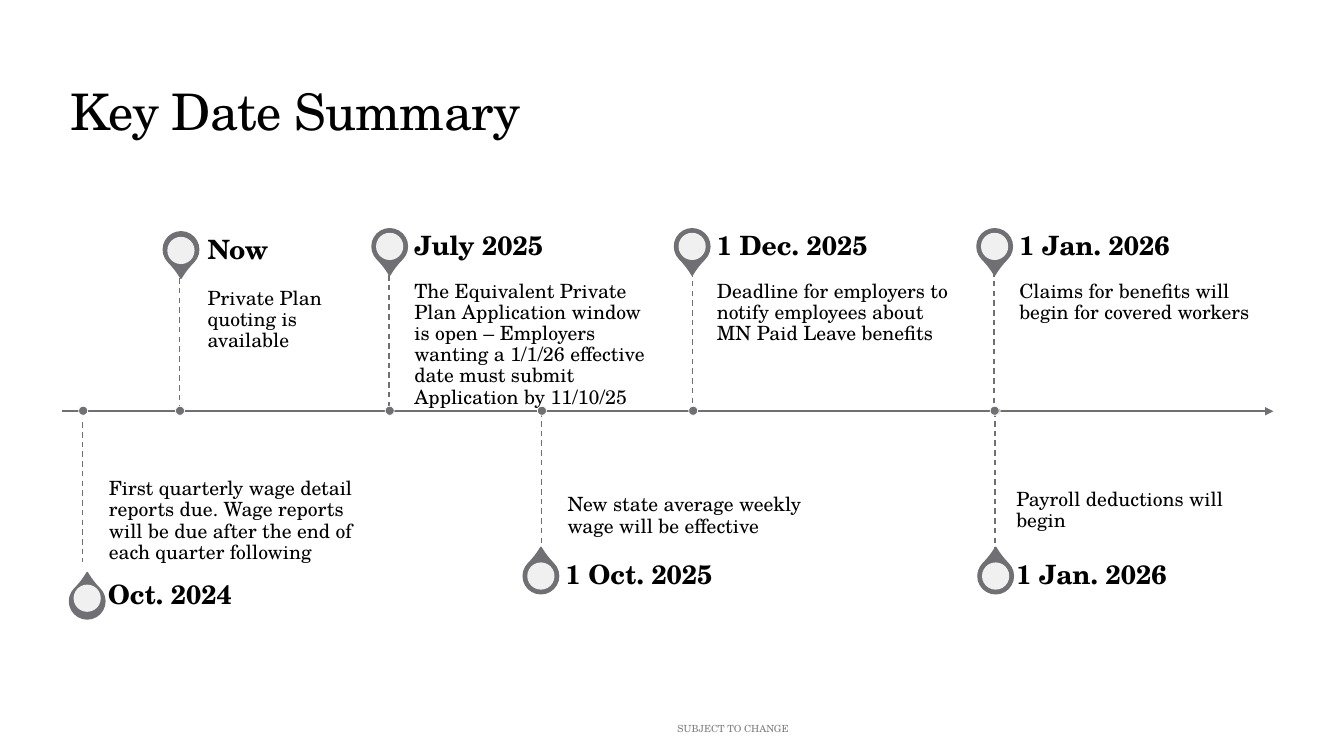
"""Build the Key Date Summary timeline slide."""
import dataclasses

import pptx
import pptx.dml.color
import pptx.enum.dml
import pptx.enum.shapes
import pptx.enum.text
import pptx.oxml
import pptx.oxml.ns
import pptx.util

EMU_PER_PX = 9144
FONT = "TeX Gyre Schola"
GREY = "6F6F74"
WHITE = "FFFFFF"
BLACK = "000000"
AXIS_Y = 408
PIN_SIZE = 35
DISC_SIZE = 27
DOT_SIZE = 9
DATE_SIZE = (250, 49)

Shape = pptx.enum.shapes.MSO_SHAPE
Anchor = pptx.enum.text.MSO_ANCHOR
Align = pptx.enum.text.PP_ALIGN
Dash = pptx.enum.dml.MSO_LINE


@dataclasses.dataclass(frozen=True)
class Box:
    left: int
    top: int
    width: int
    height: int


@dataclasses.dataclass(frozen=True)
class Milestone:
    date: str
    note: str
    above: bool
    stem_x: int
    stem: tuple[int, int]
    pin: tuple[int, int]
    date_at: tuple[int, int]
    note_box: Box
    disc_drop: int = 4


MILESTONES = [
    Milestone("Now", "Private Plan quoting is available", True, 178,
              (276, AXIS_Y), (162, 230), (206, 224), Box(206, 276, 167, 110), 5),
    Milestone("Oct. 2024",
              "First quarterly wage detail reports due. Wage reports will be due "
              "after the end of each quarter following", False, 82,
              (419, 558), (69, 579), (107, 567), Box(108, 430, 250, 139), 1),
    Milestone("July 2025",
              "The Equivalent Private Plan Application window is open – Employers "
              "wanting a 1/1/26 effective date must submit Application by 11/10/25",
              True, 386, (273, 412), (369, 227), (411, 220), Box(411, 269, 250, 139)),
    Milestone("1 Oct. 2025", "New state average weekly wage will be effective", False,
              537, (AXIS_Y, 547), (519, 554), (561, 547), Box(563, 435, 250, 108)),
    Milestone("1 Dec. 2025",
              "Deadline for employers to notify employees about MN Paid Leave benefits",
              True, 687, (269, AXIS_Y), (669, 227), (711, 220), Box(711, 269, 250, 139)),
    Milestone("1 Jan. 2026", "Payroll deductions will begin", False, 987,
              (AXIS_Y, 547), (970, 554), (1008, 547), Box(1008, 446, 215, 92)),
    Milestone("1 Jan. 2026", "Claims for benefits will begin for covered workers", True,
              986, (269, AXIS_Y), (969, 227), (1011, 220), Box(1011, 269, 250, 139)),
]


def px(length: int) -> pptx.util.Emu:
    """Turn px into EMU."""
    return pptx.util.Emu(length * EMU_PER_PX)


def place(box: Box) -> tuple[pptx.util.Emu, ...]:
    """Give the EMU position and size of a box."""
    return tuple(px(length) for length in dataclasses.astuple(box))


def rgb(colour: str) -> pptx.dml.color.RGBColor:
    """Turn a hex string into a colour."""
    return pptx.dml.color.RGBColor.from_string(colour)


def set_values(target: object, values: dict[str, object]) -> None:
    """Set every attribute named in the format values."""
    for name, value in values.items():
        setattr(target, name, value)


def add_child(parent, tag: str, **attributes: str) -> None:
    """Append a DrawingML element to a parent element."""
    child = pptx.oxml.parse_xml(f"<a:{tag} {pptx.oxml.ns.nsdecls('a')}/>")
    for name, value in attributes.items():
        child.set(name, value)
    parent.append(child)


def add_text(slide, box: Box, text: str, size: int,
             insets: tuple[int, int, int, int] = (10, 5, 10, 5),
             anchor: Anchor = Anchor.TOP, align: Align = Align.LEFT,
             colour: str = BLACK, bold: bool = False, spacing: float = 0.9):
    """Add a wrapped text box and return its run."""
    frame = slide.shapes.add_textbox(*place(box)).text_frame
    sides = ("margin_left", "margin_top", "margin_right", "margin_bottom")
    margins = {side: px(inset) for side, inset in zip(sides, insets)}
    set_values(frame, {"word_wrap": True, "vertical_anchor": anchor, **margins})
    paragraph = frame.paragraphs[0]
    set_values(paragraph, {"alignment": align, "line_spacing": spacing})
    run = paragraph.add_run()
    run.text = text
    set_values(run.font, {"name": FONT, "size": pptx.util.Pt(size), "bold": bold})
    run.font.color.rgb = rgb(colour)
    return run


def add_shape(slide, kind: Shape, box: Box, fill: str,
              line: str | None = None, line_width: float = 0):
    """Add a filled preset shape with an optional outline."""
    shape = slide.shapes.add_shape(kind, *place(box))
    shape.shadow.inherit = False
    shape.fill.solid()
    shape.fill.fore_color.rgb = rgb(fill)
    if line:
        shape.line.color.rgb = rgb(line)
        shape.line.width = pptx.util.Pt(line_width)
    else:
        shape.line.fill.background()
    return shape


def add_line(slide, start: tuple[int, int], end: tuple[int, int], width: float):
    """Add a straight grey connector without a shadow."""
    connector = slide.shapes.add_connector(
        pptx.enum.shapes.MSO_CONNECTOR.STRAIGHT, *map(px, start + end))
    connector.line.color.rgb = rgb(GREY)
    connector.line.width = pptx.util.Pt(width)
    add_child(connector._element.spPr, "effectLst")
    return connector


def add_pin(slide, milestone: Milestone) -> None:
    """Draw the map pin of a milestone."""
    left, top = milestone.pin
    pin = add_shape(slide, Shape.TEAR, Box(left, top, PIN_SIZE, PIN_SIZE), GREY, GREY, 1.1)
    pin.adjustments[0] = 1.15
    pin.rotation = 135 if milestone.above else 315
    disc = add_shape(slide, Shape.OVAL,
                     Box(left + 4, top + milestone.disc_drop, DISC_SIZE, DISC_SIZE), WHITE)
    colour = disc._element.spPr.find(".//" + pptx.oxml.ns.qn("a:srgbClr"))
    add_child(colour, "alpha", val="90000")


def add_milestone(slide, milestone: Milestone) -> None:
    """Draw the pin, texts, stem and axis dot of a milestone."""
    add_pin(slide, milestone)
    insets, anchor = (((0, 10, 10, 15), Anchor.TOP) if milestone.above
                      else ((0, 15, 0, 10), Anchor.BOTTOM))
    add_text(slide, milestone.note_box, milestone.note, 14, insets, anchor)
    add_text(slide, Box(*milestone.date_at, *DATE_SIZE), milestone.date, 19,
             (0, 0, 13, 0), Anchor.MIDDLE, bold=True)
    top, bottom = milestone.stem
    stem = add_line(slide, (milestone.stem_x, top), (milestone.stem_x, bottom), 1)
    stem.line.dash_style = Dash.DASH
    add_shape(slide, Shape.OVAL,
              Box(milestone.stem_x - 4, AXIS_Y - 5, DOT_SIZE, DOT_SIZE), GREY, WHITE, 0.5)


def main() -> None:
    """Build and save the slide."""
    presentation = pptx.Presentation()
    set_values(presentation, {"slide_width": px(1333), "slide_height": px(750)})
    slide = presentation.slides.add_slide(presentation.slide_layouts[6])
    title = add_text(slide, Box(60, 25, 1200, 120), "Key Date Summary", 36,
                     anchor=Anchor.BOTTOM)
    title.font._element.set("spc", "-50")
    axis = add_line(slide, (62, AXIS_Y), (1263, AXIS_Y), 1.5)
    add_child(axis.line._get_or_add_ln(), "tailEnd", type="triangle")
    for milestone in MILESTONES:
        add_milestone(slide, milestone)
    add_text(slide, Box(562, 712, 230, 22), "SUBJECT TO CHANGE", 7,
             align=Align.RIGHT, colour="808080", spacing=1.0)
    presentation.save("out.pptx")


if __name__ == "__main__":
    main()
